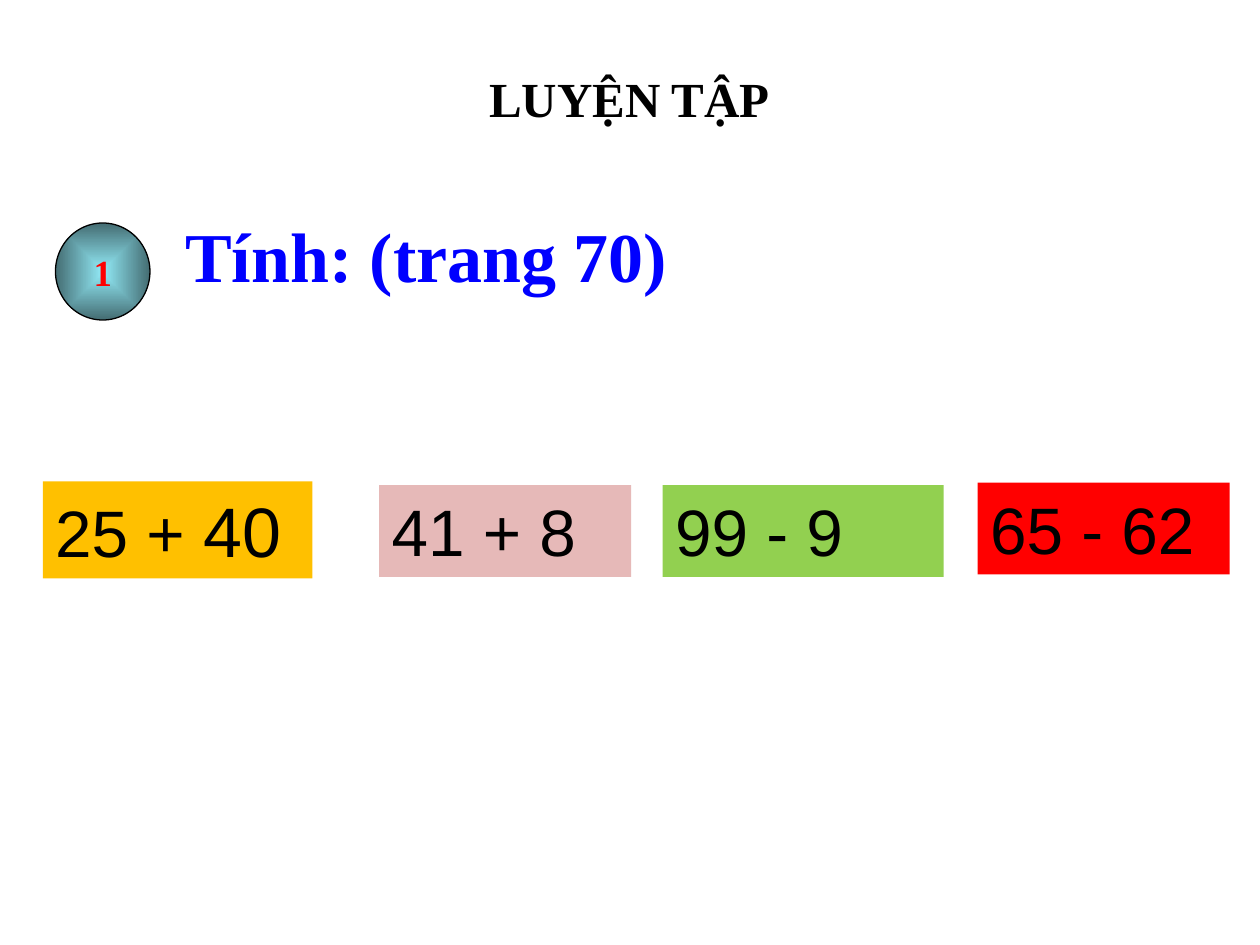
from pptx import Presentation
from pptx import util as u
from pptx.dml import color
from pptx.enum import shapes, text
from pptx.oxml import ns, parse_xml

SERIF = "Times New Roman"
SANS = "Arial"


def rgb(code):
    """Turn a hex string into a colour."""
    return color.RGBColor.from_string(code)


class Page:
    """Hold the style and the current slide."""

    def __init__(self, deck):
        """Add a title-only slide."""
        self.slide = deck.slides.add_slide(deck.slide_layouts[5])

    def put(self, item, runs, font, ink, bold=False, align=text.PP_ALIGN.LEFT,
            anchor=text.MSO_ANCHOR.TOP, wrap=True, gap=False):
        """Fill a shape with one line given as (words, size) runs."""
        frame = item.text_frame
        frame.word_wrap = wrap
        frame.vertical_anchor = anchor
        line = frame.paragraphs[0]
        line.alignment = align
        if gap:
            line._p.get_or_add_pPr().append(parse_xml(
                f'<a:spcBef {ns.nsdecls("a")}><a:spcPct val="50000"/></a:spcBef>'))
        for words, size in runs:
            run = line.add_run()
            run.text = words
            run.font.size = u.Pt(size)
            run.font.name = font
            run.font.bold = bold
            run.font.color.rgb = rgb(ink)

    def title(self, box, words):
        """Place the slide title."""
        item = self.slide.shapes.title
        item.left, item.top, item.width, item.height = map(u.Inches, box)
        self.put(item, [(words, 28)], SERIF, "000000", True, text.PP_ALIGN.CENTER)

    def label(self, box, runs):
        """Add the task heading."""
        item = self.slide.shapes.add_textbox(*map(u.Inches, box))
        self.put(item, runs, SERIF, "0000FF", True, gap=True)

    def card(self, box, fill, runs):
        """Add a coloured card with a sum."""
        item = self.slide.shapes.add_shape(
            shapes.MSO_SHAPE.RECTANGLE, *map(u.Inches, box))
        item.shadow.inherit = False
        item.fill.solid()
        item.fill.fore_color.rgb = rgb(fill)
        item.line.fill.background()
        self.put(item, runs, SANS, "000000", gap=True)

    def badge(self, box, words, inner, outer):
        """Add a round number badge shaded from its centre."""
        item = self.slide.shapes.add_shape(
            shapes.MSO_SHAPE.OVAL, *map(u.Inches, box))
        item.shadow.inherit = False
        item.fill.gradient()
        for stop, code, spot in zip(item.fill.gradient_stops, (inner, outer), (0, 1)):
            stop.color.rgb = rgb(code)
            stop.position = spot
        lin = item._element.spPr.find(".//" + ns.qn("a:lin"))
        lin.getparent().replace(lin, parse_xml(
            f'<a:path {ns.nsdecls("a")} path="shape">'
            '<a:fillToRect l="50000" t="50000" r="50000" b="50000"/></a:path>'))
        item.line.color.rgb = rgb("000000")
        item.line.width = u.Pt(0.75)
        self.put(item, [(words, 21)], SERIF, "FF0000", True,
                 text.PP_ALIGN.CENTER, text.MSO_ANCHOR.MIDDLE, False)


def main():
    """Build the practice slide."""
    deck = Presentation()
    deck.slide_width, deck.slide_height = u.Inches(10), u.Inches(7.5)
    page = Page(deck)
    page.title((0.33, 0.49, 9.33, 0.57), "LUYỆN TẬP")
    page.badge((0.44, 1.77, 0.75, 0.77), "1", "92EAF6", "446C72")
    page.label((1.3, 1.64, 5.75, 0.77), [(" ", 21), ("Tính: (trang 70)", 40)])
    cards = [
        ((0.34, 3.82, 2.14, 0.77), "FFC000", [("25 + ", 37.5), ("40", 40)]),
        ((3.01, 3.85, 2, 0.73), "E6B9B8", [("41 + 8", 37.5)]),
        ((5.26, 3.85, 2.23, 0.73), "92D050", [("99 - 9", 37.5)]),
        ((7.76, 3.83, 2, 0.73), "FF0000", [("65 - 62", 37.5)]),
    ]
    for box, fill, runs in cards:
        page.card(box, fill, runs)
    deck.save("out.pptx")


if __name__ == "__main__":
    main()
